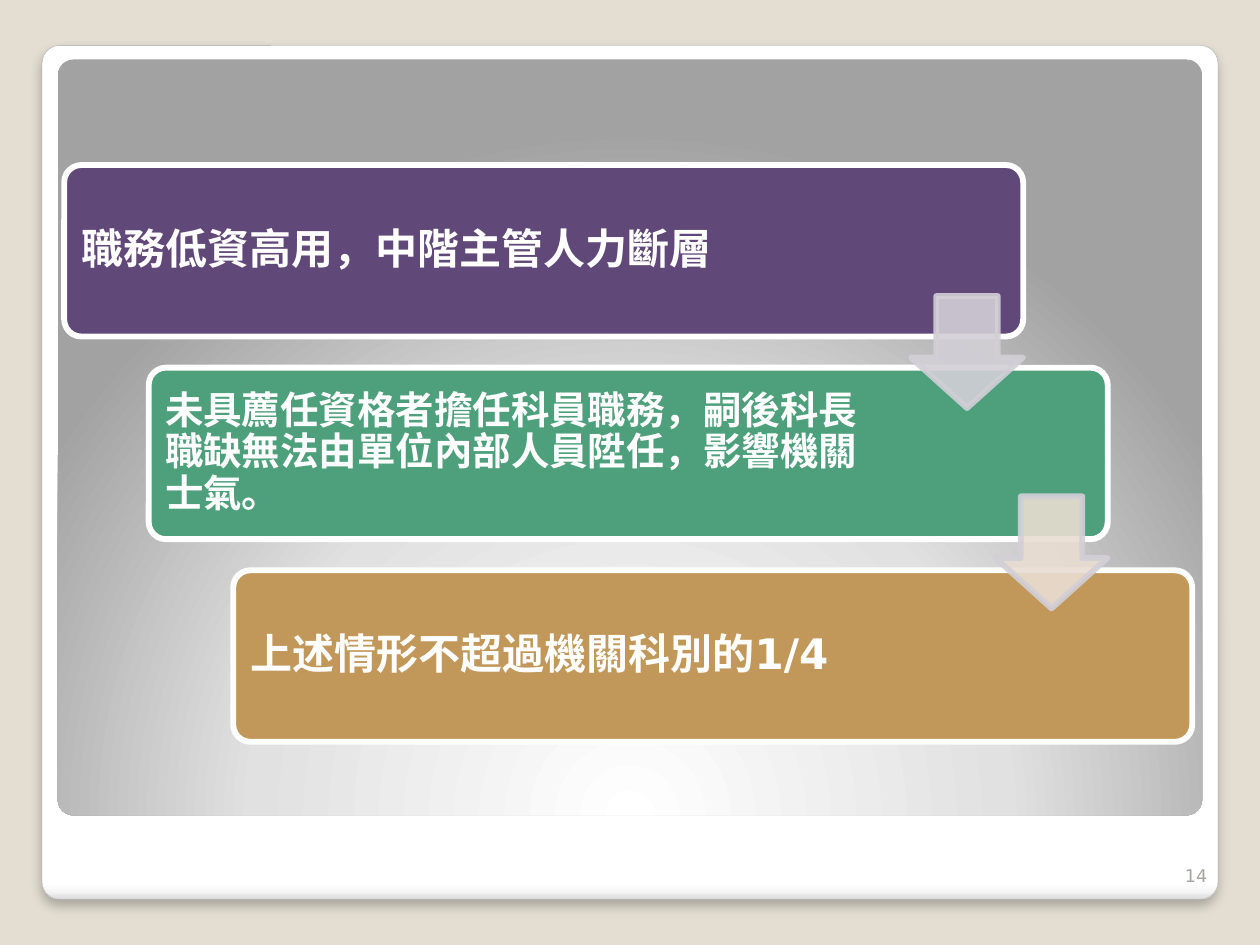
"""Build a slide with three stepped statements linked by down arrows."""
from dataclasses import dataclass

import pptx
import pptx.dml.color
import pptx.enum.shapes
import pptx.enum.text
import pptx.oxml
import pptx.oxml.ns
import pptx.util

Pt = pptx.util.Pt
Shape = pptx.enum.shapes.MSO_SHAPE
Anchor = pptx.enum.text.MSO_ANCHOR
Align = pptx.enum.text.PP_ALIGN


@dataclass(frozen=True)
class Theme:
    """Colours, font and type sizes of the slide."""
    font: str = "DejaVu Sans"
    background: str = "E3DED1"
    white: str = "FFFFFF"
    frame_line: str = "A4A4A4"
    frame_stops: tuple = ((0, "FFFFFF"), (98, "FFFFFF"), (99, "F7F7F7"), (100, "DADADA"))
    panel_stops: tuple = ((0, "FFFFFF"), (55, "E1E1E1"), (100, "A2A2A2"))
    cards: tuple = ("604878", "4DA07B", "C19859")
    arrows: tuple = ("D2CFD6", "E9DDD1")
    arrow_line: str = "D2CFD6"
    number: str = "A8A49B"
    large: float = 24
    medium: float = 22
    small: float = 10
    outline: float = 3.35


THEME = Theme()
LINEAR = '<a:lin ang="5400000" scaled="0"/>'
RADIAL = ('<a:path path="circle"><a:fillToRect l="50000" t="175000" '
          'r="50000" b="-75000"/></a:path>')
STATEMENTS = (
    ("職務低資高用，中階主管人力斷層", THEME.large, 7.2, 440.6),
    ("未具薦任資格者擔任科員職務，嗣後科長職缺無法由單位內部人員陞任，影響機關士氣。",
     THEME.medium, 6.5, 429),
    ("上述情形不超過機關科別的1/4", THEME.large, 7.2, 429),
)
CARD_LEFT, CARD_TOP, CARD_WIDTH, CARD_HEIGHT = 36.7, 94.3, 548, 98
STEP_X, STEP_Y = 48.3, 115.8
ARROW_LEFT, ARROW_TOP, ARROW_SIZE, ARROW_STEP_Y = 520.6, 169.2, 64, 114.5


def rgb(value):
    """Turn a hex string into a colour."""
    return pptx.dml.color.RGBColor.from_string(value)


def parse(xml):
    """Parse an XML fragment that uses the drawing namespace."""
    head, tail = xml.split(">", 1)
    names = pptx.oxml.ns.nsdecls("a")
    end = "/" if head.endswith("/") else ""
    return pptx.oxml.parse_xml(f"{head.rstrip('/')} {names}{end}>{tail}")


def add_block(page, kind, bounds, adjustments, fill, line=None, width=0):
    """Add a flat preset shape with a fill and an optional outline."""
    block = page.shapes.add_shape(kind, *map(Pt, bounds))
    block.shadow.inherit = False
    for index, value in enumerate(adjustments):
        block.adjustments[index] = value
    block.fill.solid()
    block.fill.fore_color.rgb = rgb(fill)
    if line:
        block.line.color.rgb = rgb(line)
        block.line.width = Pt(width)
    else:
        block.line.fill.background()
    return block


def set_gradient(block, stops, direction):
    """Replace the solid fill of a block by a gradient."""
    marks = "".join(f'<a:gs pos="{place * 1000}"><a:srgbClr val="{color}"/></a:gs>'
                    for place, color in stops)
    gradient = parse(f'<a:gradFill rotWithShape="1"><a:gsLst>{marks}</a:gsLst>'
                     f'{direction}</a:gradFill>')
    properties = block.element.spPr
    properties.replace(properties.find(pptx.oxml.ns.qn("a:solidFill")), gradient)


def add_shadow(block):
    """Give a block a soft shadow below it."""
    effects = block.element.spPr.find(pptx.oxml.ns.qn("a:effectLst"))
    effects.append(parse(
        f'<a:outerShdw blurRad="{Pt(6)}" dist="{Pt(4)}" dir="5400000" rotWithShape="0">'
        '<a:srgbClr val="000000"><a:alpha val="25000"/></a:srgbClr></a:outerShdw>'))


def add_text(page, bounds, text, size, color, anchor, inset, bold=False, align=None):
    """Add a wrapped text box holding one paragraph."""
    box = page.shapes.add_textbox(*map(Pt, bounds))
    frame = box.text_frame
    frame.word_wrap = True
    frame.vertical_anchor = anchor
    frame.margin_left = frame.margin_right = Pt(inset)
    frame.margin_top = frame.margin_bottom = Pt(inset)
    para = frame.paragraphs[0]
    para.alignment = align
    para.line_spacing = 0.9
    span = para.add_run()
    span.text = text
    span.font.name = THEME.font
    span.font.size = Pt(size)
    span.font.bold = bold
    span.font.color.rgb = rgb(color)


def add_backdrop(page):
    """Add the white frame and the grey panel inside it."""
    frame = add_block(page, Shape.ROUNDED_RECTANGLE, (24, 26, 672, 488), [0.021],
                      THEME.white, THEME.frame_line, 0.16)
    set_gradient(frame, THEME.frame_stops, LINEAR)
    add_shadow(frame)
    panel = add_block(page, Shape.ROUNDED_RECTANGLE, (33, 34, 654, 432), [0.021],
                      THEME.white)
    set_gradient(panel, THEME.panel_stops, RADIAL)


def add_card(page, index, statement):
    """Add one statement card on its step."""
    text, size, inset, width = statement
    left, top = CARD_LEFT + index * STEP_X, CARD_TOP + index * STEP_Y
    add_block(page, Shape.ROUNDED_RECTANGLE, (left, top, CARD_WIDTH, CARD_HEIGHT), [0.1],
              THEME.cards[index], THEME.white, THEME.outline)
    add_text(page, (left + 2.9, top + 2.9, width, CARD_HEIGHT - 5.8), text, size,
             THEME.white, Anchor.MIDDLE, inset, bold=True)


def add_arrow(page, index, fill):
    """Add a translucent arrow from one card to the next."""
    bounds = (ARROW_LEFT + index * STEP_X, ARROW_TOP + index * ARROW_STEP_Y,
              ARROW_SIZE, ARROW_SIZE)
    arrow = add_block(page, Shape.DOWN_ARROW, bounds, [0.55, 0.45], fill,
                      THEME.arrow_line, THEME.outline)
    for color in list(arrow.element.spPr.iter(pptx.oxml.ns.qn("a:srgbClr"))):
        color.append(parse('<a:alpha val="90000"/>'))


def main():
    """Build and save the deck."""
    deck = pptx.Presentation()
    deck.slide_width, deck.slide_height = Pt(720), Pt(540)
    page = deck.slides.add_slide(deck.slide_layouts[6])
    page.background.fill.solid()
    page.background.fill.fore_color.rgb = rgb(THEME.background)
    add_backdrop(page)
    for index, statement in enumerate(STATEMENTS):
        add_card(page, index, statement)
    for index, fill in enumerate(THEME.arrows):
        add_arrow(page, index, fill)
    add_text(page, (657.4, 481, 36, 28.8), "14", THEME.small, THEME.number,
             Anchor.BOTTOM, 7.2 / 2, align=Align.RIGHT)
    deck.save("out.pptx")


if __name__ == "__main__":
    main()
